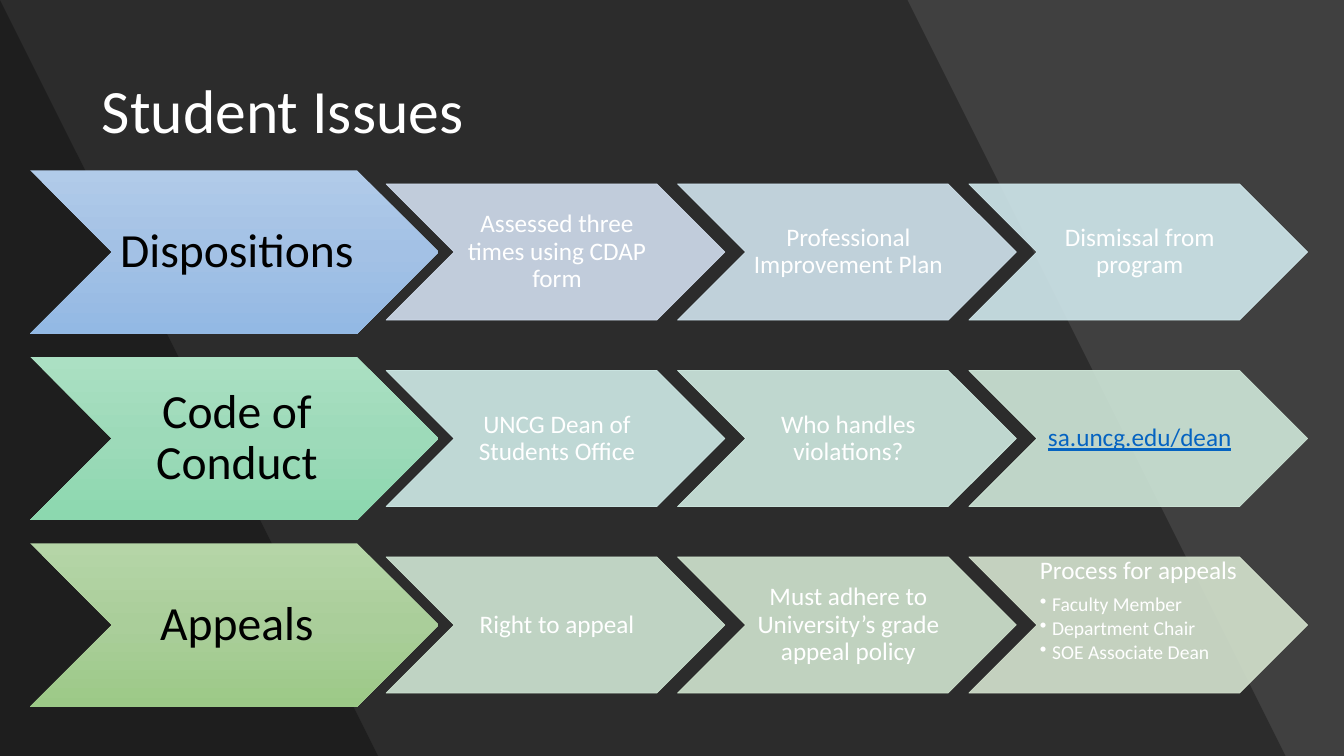
from copy import deepcopy

from lxml import etree
from pptx import Presentation
from pptx.dml.color import RGBColor
from pptx.enum.shapes import MSO_SHAPE
from pptx.enum.text import MSO_ANCHOR, PP_ALIGN
from pptx.oxml.ns import qn
from pptx.util import Inches, Pt

CHEVRON = MSO_SHAPE.CHEVRON
MIDDLE, TOP = MSO_ANCHOR.MIDDLE, MSO_ANCHOR.TOP
LEFT, CENTER = PP_ALIGN.LEFT, PP_ALIGN.CENTER

BACKGROUND = RGBColor(0x40, 0x40, 0x40)
BLACK = RGBColor(0, 0, 0)
WHITE = RGBColor(0xFF, 0xFF, 0xFF)
LINK_BLUE = RGBColor(0x05, 0x63, 0xC1)
BLUES = [RGBColor(0xB1, 0xCB, 0xE9), RGBColor(0xA3, 0xC1, 0xE5), RGBColor(0x93, 0xB9, 0xE4)]
TEALS = [RGBColor(0xAB, 0xE0, 0xC3), RGBColor(0x9D, 0xDA, 0xB9), RGBColor(0x8C, 0xD8, 0xAF)]
GREENS = [RGBColor(0xB5, 0xD5, 0xA7), RGBColor(0xAA, 0xCE, 0x9A), RGBColor(0x9C, 0xC9, 0x87)]
BLUE_TINTS = [RGBColor(0xD2, 0xDE, 0xEF), RGBColor(0xD1, 0xE4, 0xEE), RGBColor(0xD1, 0xE9, 0xED)]
TEAL_TINTS = [RGBColor(0xD0, 0xEB, 0xE8), RGBColor(0xD0, 0xEA, 0xE1), RGBColor(0xD0, 0xE8, 0xDA)]
GREEN_TINTS = [RGBColor(0xD0, 0xE6, 0xD4), RGBColor(0xD1, 0xE5, 0xCF), RGBColor(0xD5, 0xE3, 0xCF)]

TITLE = "Student Issues"
LINK = "sa.uncg.edu/dean"
# Each row: topic, gradient, steps (first line, then bullets), step fills
ROWS = [
    ("Dispositions", BLUES,
     [["Assessed three times using CDAP form"], ["Professional Improvement Plan"],
      ["Dismissal from program"]], BLUE_TINTS),
    ("Code of Conduct", TEALS,
     [["UNCG Dean of Students Office"], ["Who handles violations?"], [LINK]], TEAL_TINTS),
    ("Appeals", GREENS,
     [["Right to appeal"], ["Must adhere to University’s grade appeal policy"],
      ["Process for appeals", "Faculty Member", "Department Chair", "SOE Associate Dean"]],
     GREEN_TINTS),
]

FONT = "Calibri"
WIDTH, HEIGHT = 13.33, 7.5
BAND_EDGES = [(9.42, 12.89), (0.44, 3.92)]  # right edge at top and at bottom
TOPIC_LEFT, TOPIC_TOP, TOPIC_WIDTH, TOPIC_HEIGHT = 0.3, 1.69, 4.05, 1.62
STEP_LEFT, STEP_WIDTH, STEP_HEIGHT = 3.83, 3.36, 1.35
ROW_PITCH, STEP_PITCH = 1.85, 2.89
BULLET_INDENT = 0.12


def set_alpha(fill_parent, percent):
    color = fill_parent.find(qn("a:solidFill"))[0]
    etree.SubElement(color, qn("a:alpha")).set("val", str(percent * 1000))


def add_band(slide, top_edge, bottom_edge):
    builder = slide.shapes.build_freeform(0, 0, scale=Inches(1))
    builder.add_line_segments([(top_edge, 0), (bottom_edge, HEIGHT), (0, HEIGHT)], close=True)
    band = builder.convert_to_shape()
    band.shadow.inherit = False
    band.fill.solid()
    band.fill.fore_color.rgb = BLACK
    set_alpha(band._element.spPr, 30)
    band.line.fill.background()


def add_chevron(slide, left, top, width, height, inset):
    chevron = slide.shapes.add_shape(
        CHEVRON, Inches(left), Inches(top), Inches(width), Inches(height))
    chevron.shadow.inherit = False
    frame = chevron.text_frame
    frame.word_wrap = True
    frame.vertical_anchor = MIDDLE
    frame.margin_left, frame.margin_right = Inches(inset), 0
    frame.margin_top = frame.margin_bottom = Inches(inset * 0.4)
    return chevron


def write(para, text, size, color, align):
    para.alignment = align
    para.line_spacing = 0.9
    span = para.add_run()
    span.text = text
    span.font.name = FONT
    span.font.size = Pt(size)
    span.font.color.rgb = color
    span.font.underline = True if text == LINK else None


def make_bullet(para):
    para.level = 1
    props = para._p.get_or_add_pPr()
    props.set("marL", str(Inches(BULLET_INDENT)))
    props.set("indent", str(-Inches(BULLET_INDENT)))
    etree.SubElement(props, qn("a:buChar")).set("char", "•")


def add_topic(slide, top, text, colors):
    topic = add_chevron(slide, TOPIC_LEFT, top, TOPIC_WIDTH, TOPIC_HEIGHT, 0.05)
    topic.fill.gradient()
    topic.fill.gradient_angle = 270
    stop_list = topic._element.spPr.find(qn("a:gradFill")).find(qn("a:gsLst"))
    stop_list.append(deepcopy(stop_list[-1]))
    for index, (stop, color) in enumerate(zip(topic.fill.gradient_stops, colors)):
        stop.position = index / 2
        stop.color.rgb = color
    topic.line.fill.background()
    write(topic.text_frame.paragraphs[0], text, 34, BLACK, CENTER)


def add_step(slide, left, top, lines, color):
    step = add_chevron(slide, left, top, STEP_WIDTH, STEP_HEIGHT, 0.03)
    step.fill.solid()
    step.fill.fore_color.rgb = color
    step.line.color.rgb = color
    step.line.width = Pt(0.5)
    set_alpha(step._element.spPr, 90)
    set_alpha(step.line._ln, 90)
    frame = step.text_frame
    heading, *bullets = lines
    if bullets:
        frame.vertical_anchor = TOP
    para = frame.paragraphs[0]
    write(para, heading, 18, LINK_BLUE if heading == LINK else WHITE, LEFT if bullets else CENTER)
    if bullets:
        para.space_after = Pt(18 * 0.35)
    for bullet in bullets:
        para = frame.add_paragraph()
        make_bullet(para)
        write(para, bullet, 14, WHITE, LEFT)
        para.space_after = Pt(14 * 0.15)


def main():
    deck = Presentation()
    deck.slide_width, deck.slide_height = Inches(WIDTH), Inches(HEIGHT)
    slide = deck.slides.add_slide(deck.slide_layouts[5])
    slide.background.fill.solid()
    slide.background.fill.fore_color.rgb = BACKGROUND

    for top_edge, bottom_edge in BAND_EDGES:
        add_band(slide, top_edge, bottom_edge)

    title = slide.shapes.title
    slide.shapes._spTree.append(title._element)  # bring in front of the bands
    title.left, title.top = Inches(0.91), Inches(0.4)
    title.width, title.height = Inches(11.51), Inches(1.45)
    title.text_frame.vertical_anchor = MIDDLE
    write(title.text_frame.paragraphs[0], TITLE, 44, WHITE, LEFT)

    for row, (topic, gradient, steps, tints) in enumerate(ROWS):
        top = TOPIC_TOP + row * ROW_PITCH
        add_topic(slide, top, topic, gradient)
        step_top = top + (TOPIC_HEIGHT - STEP_HEIGHT) / 2
        for column, (lines, tint) in enumerate(zip(steps, tints)):
            add_step(slide, STEP_LEFT + column * STEP_PITCH, step_top, lines, tint)

    deck.save("out.pptx")


if __name__ == "__main__":
    main()
